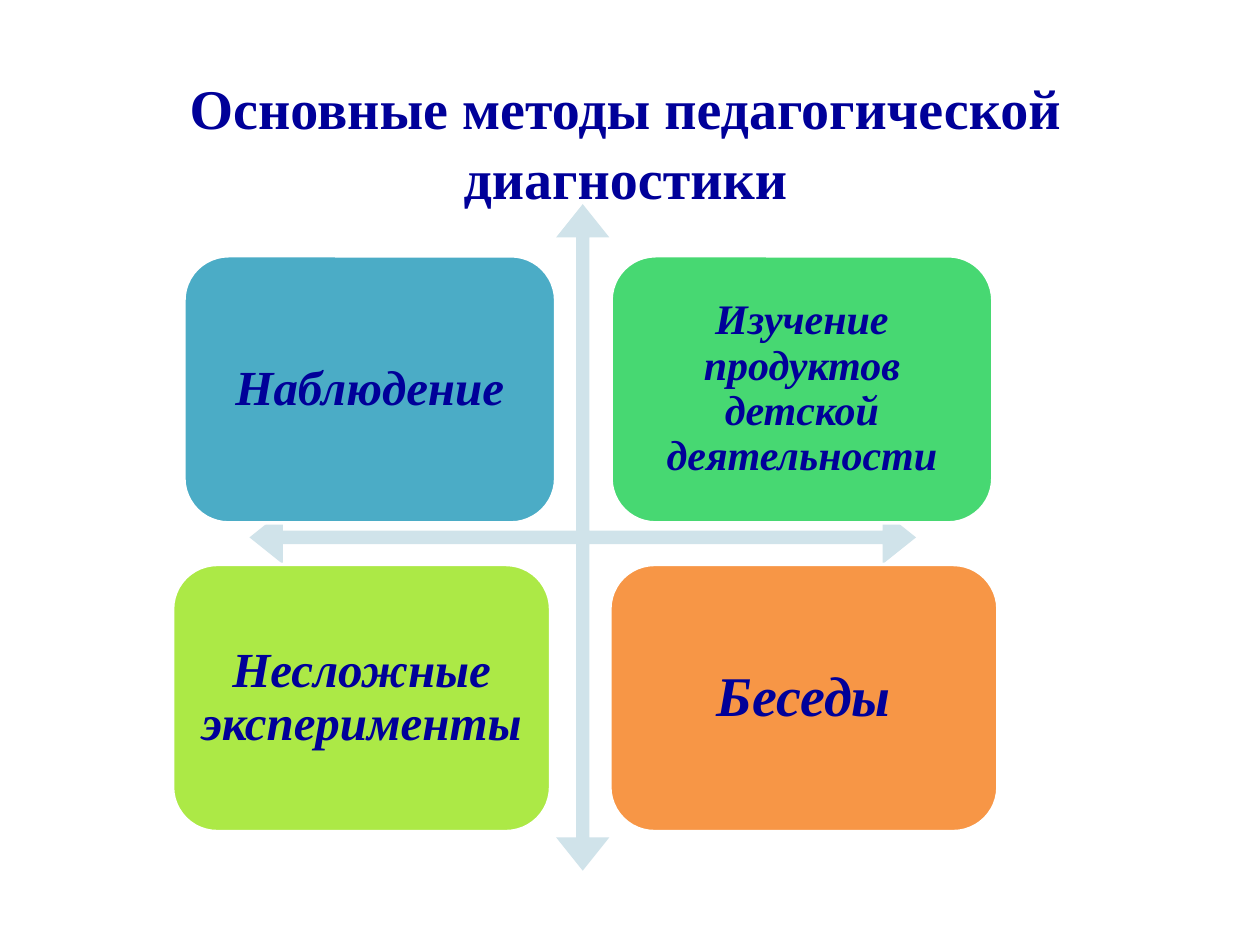
from pptx import Presentation
from pptx.dml.color import RGBColor
from pptx.enum.shapes import MSO_SHAPE as Shape
from pptx.enum.text import MSO_ANCHOR as Anchor, PP_ALIGN as Align
from pptx.util import Inches, Pt

NAVY = "000099"
TOP_ROW, BOTTOM_ROW = 2.03, 4.48
CARD_HEIGHT = 2.12
METHODS = [
    ("Наблюдение", 1.46, TOP_ROW, 2.95, "4BACC6", 28),
    ("Изучение продуктов детской деятельности", 4.85, TOP_ROW, 3.03, "47D872", 24),
    ("Несложные эксперименты", 1.37, BOTTOM_ROW, 3, "ACE946", 28),
    ("Беседы", 4.84, BOTTOM_ROW, 3.08, "F79646", 32),
]


def color(value):
    return RGBColor.from_string(value)


def write(box, text, size, spacing, italic=False):
    frame = box.text_frame
    frame.word_wrap = True
    frame.vertical_anchor = Anchor.MIDDLE
    para = frame.paragraphs[0]
    para.text = text
    para.alignment = Align.CENTER
    para.line_spacing = spacing
    font = para.runs[0].font
    font.name = "Times New Roman"
    font.size = Pt(size)
    font.bold = True
    font.italic = italic
    font.color.rgb = color(NAVY)


def add_title(slide, text):
    box = slide.shapes.add_textbox(Inches(0.43), Inches(0.68), Inches(9.07), Inches(0.87))
    write(box, text, 32, 1.05)


def add_filled(slide, kind, left, top, width, height, fill):
    shape = slide.shapes.add_shape(
        kind, Inches(left), Inches(top), Inches(width), Inches(height))
    shape.shadow.inherit = False
    shape.fill.solid()
    shape.fill.fore_color.rgb = color(fill)
    return shape


def add_axes(slide):
    axes = add_filled(slide, Shape.QUAD_ARROW, 1.98, 1.62, 5.29, 5.29, "D0E3EA")
    axes.line.fill.background()
    for index, value in enumerate((0.02, 0.04, 0.05)):
        axes.adjustments[index] = value


def add_card(slide, text, left, top, width, fill, size):
    card = add_filled(slide, Shape.ROUNDED_RECTANGLE, left, top, width, CARD_HEIGHT, fill)
    card.line.color.rgb = color("FFFFFF")
    card.line.width = Pt(2)
    frame = card.text_frame
    frame.margin_left = frame.margin_right = Inches(0.01)
    frame.margin_top = frame.margin_bottom = Inches(0.01)
    write(card, text, size, 0.9, italic=True)


def main():
    deck = Presentation()
    deck.slide_width, deck.slide_height = Inches(10), Inches(7.5)
    slide = deck.slides.add_slide(deck.slide_layouts[6])
    add_title(slide, "Основные методы педагогической диагностики")
    add_axes(slide)
    for method in METHODS:
        add_card(slide, *method)
    deck.save("out.pptx")


if __name__ == "__main__":
    main()
